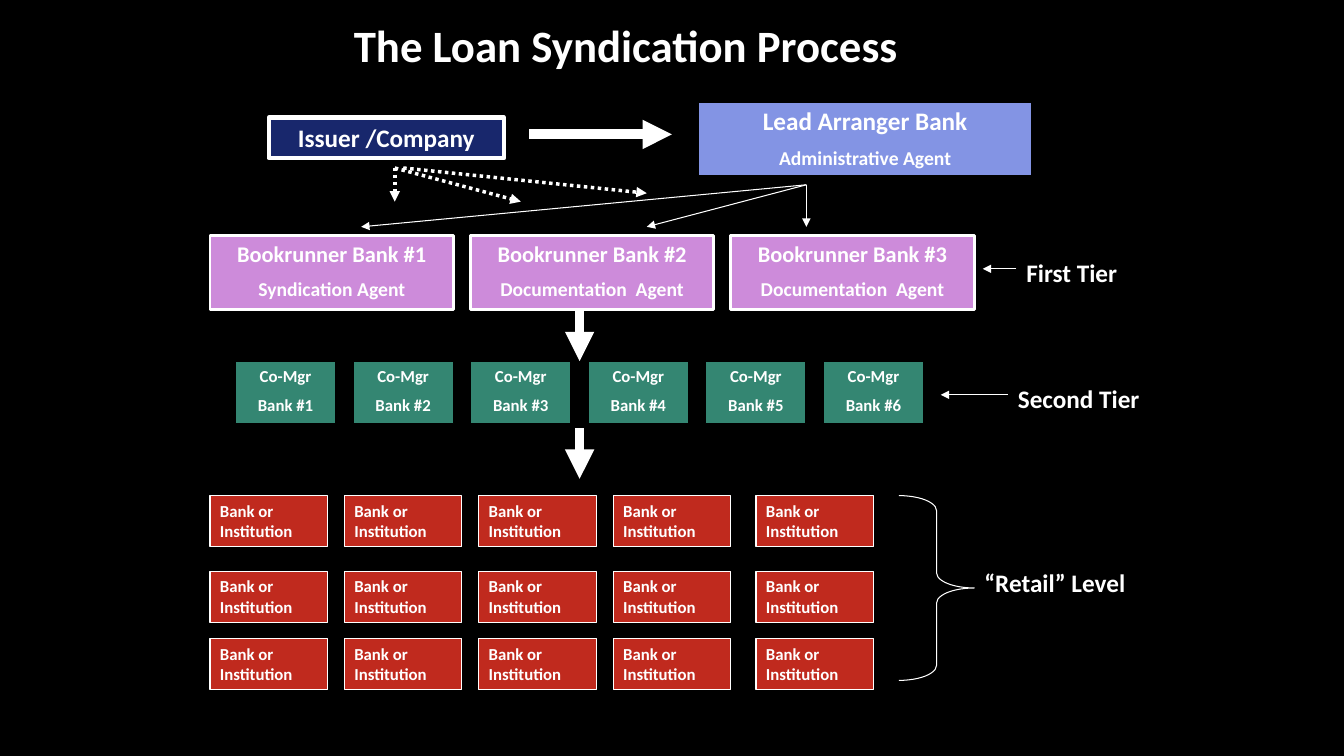
import pptx
import pptx.util
import pptx.dml.color
import pptx.enum.dml
import pptx.enum.shapes
import pptx.enum.text
import pptx.oxml
import pptx.oxml.ns
from dataclasses import dataclass

Pt = pptx.util.Pt
SHAPE = pptx.enum.shapes.MSO_SHAPE
ALIGN = pptx.enum.text.PP_ALIGN


@dataclass(frozen=True)
class Theme:
    font: str = "Calibri"
    black: str = "000000"
    white: str = "FFFFFF"
    navy: str = "18276C"
    blue: str = "8394E4"
    violet: str = "CD8BDA"
    green: str = "348672"
    red: str = "C02A1E"
    title: int = 32
    heading: int = 18
    bookrunner: int = 16
    agent: int = 14
    bank: int = 12
    thin: float = 0.75
    dotted: float = 2.5
    thick: float = 7


theme = Theme()

TITLE = "The Loan Syndication Process"
ISSUER = "Issuer /Company"
LEAD = ("Lead Arranger Bank", "Administrative Agent")
BOOKRUNNERS = [
    ("Bookrunner Bank #1", "Syndication Agent"),
    ("Bookrunner Bank #2", "Documentation  Agent"),
    ("Bookrunner Bank #3", "Documentation  Agent"),
]
CO_MANAGERS = [("Co-Mgr", f"Bank #{n}") for n in range(1, 7)]
RETAIL_BANK = "Bank or Institution"
RETAIL_COLUMNS = (150, 246, 342, 438, 540)
RETAIL_ROWS = (354, 408, 456)
TIERS = [
    ("First Tier", 726, 180, 102),
    ("Second Tier", 720, 270, 120),
    ("“Retail” Level", 696, 402, 144),
]
FLOW_ARROWS = [
    (378, 96, 480, 96),
    (414, 222, 414, 258),
    (414, 306, 414, 342),
]
LEAD_ARROWS = [(576, 132, x, 162) for x in (258, 462, 576)]
TIER_ARROWS = [(726, 192, 702, 192), (720, 282, 672, 282)]
ISSUER_ARROWS = [
    (282, 120, 282, 144),
    (282, 120, 372, 144),
    (288, 120, 462, 138),
]

prs = pptx.Presentation()
prs.slide_width, prs.slide_height = Pt(960), Pt(540)
s = prs.slides.add_slide(prs.slide_layouts[6])


def rgb(color):
    return pptx.dml.color.RGBColor.from_string(color)


def write(sp, lines, sizes, align=ALIGN.LEFT):
    tf = sp.text_frame
    tf.word_wrap = True
    tf.auto_size = pptx.enum.text.MSO_AUTO_SIZE.SHAPE_TO_FIT_TEXT
    tf.vertical_anchor = pptx.enum.text.MSO_ANCHOR.TOP
    for i, (line, size) in enumerate(zip(lines, sizes)):
        p = tf.paragraphs[0] if i == 0 else tf.add_paragraph()
        p.alignment = align
        if i:
            p.space_before = Pt(size / 2)
        r = p.add_run()
        r.text = line
        r.font.name = theme.font
        r.font.size = Pt(size)
        r.font.bold = True
        r.font.color.rgb = rgb(theme.white)


def label(text, x, y, w, h, size, align=ALIGN.LEFT):
    sp = s.shapes.add_textbox(Pt(x), Pt(y), Pt(w), Pt(h))
    write(sp, [text], [size], align)


def box(lines, sizes, x, y, w, h, fill, line, weight, align=ALIGN.CENTER):
    sp = s.shapes.add_shape(SHAPE.RECTANGLE, Pt(x), Pt(y), Pt(w), Pt(h))
    sp.shadow.inherit = False
    sp.fill.solid()
    sp.fill.fore_color.rgb = rgb(fill)
    sp.line.color.rgb = rgb(line)
    sp.line.width = Pt(weight)
    write(sp, lines, sizes, align)


def arrow(x1, y1, x2, y2, weight, dash=None):
    cx = s.shapes.add_connector(pptx.enum.shapes.MSO_CONNECTOR.STRAIGHT,
                                Pt(x1), Pt(y1), Pt(x2), Pt(y2))
    cx.line.color.rgb = rgb(theme.white)
    cx.line.width = Pt(weight)
    if dash:
        cx.line.dash_style = dash
    ns = pptx.oxml.ns.nsdecls("a")
    sp_pr = cx._element.spPr
    ln = sp_pr.find(pptx.oxml.ns.qn("a:ln"))
    ln.append(pptx.oxml.parse_xml(f'<a:tailEnd {ns} type="triangle"/>'))
    sp_pr.append(pptx.oxml.parse_xml(f"<a:effectLst {ns}/>"))


def main():
    s.background.fill.solid()
    s.background.fill.fore_color.rgb = rgb(theme.black)

    label(TITLE, 150, 9, 594, 46, theme.title, ALIGN.CENTER)
    box([ISSUER], [theme.heading], 192, 84, 168, 29,
        theme.navy, theme.white, 3)
    box(LEAD, (theme.heading, theme.agent), 498, 72, 240, 54.7,
        theme.blue, theme.black, 3)
    for i, lines in enumerate(BOOKRUNNERS):
        box(lines, (theme.bookrunner, theme.agent), 150 + 186 * i, 168, 174, 53.3,
            theme.violet, theme.white, 2)
    for i, lines in enumerate(CO_MANAGERS):
        box(lines, (theme.bank, theme.bank), 168 + 84 * i, 258, 72, 44.6,
            theme.green, theme.black, 1.25)
    for y in RETAIL_ROWS:
        for x in RETAIL_COLUMNS:
            box([RETAIL_BANK], [theme.bank], x, y, 84, 36.6,
                theme.red, theme.white, theme.thin, ALIGN.LEFT)

    for text, x, y, w in TIERS:
        label(text, x, y, w, 29, theme.heading)
    for ends in FLOW_ARROWS:
        arrow(*ends, theme.thick)
    for ends in LEAD_ARROWS + TIER_ARROWS:
        arrow(*ends, theme.thin)
    for ends in ISSUER_ARROWS:
        arrow(*ends, theme.dotted, pptx.enum.dml.MSO_LINE.ROUND_DOT)

    brace = s.shapes.add_shape(SHAPE.RIGHT_BRACE, Pt(642), Pt(354), Pt(54), Pt(132))
    brace.shadow.inherit = False
    brace.adjustments[0] = 0.2
    brace.adjustments[1] = 0.5
    brace.fill.background()
    brace.line.color.rgb = rgb(theme.white)
    brace.line.width = Pt(theme.thin)

    prs.save("out.pptx")


if __name__ == "__main__":
    main()
